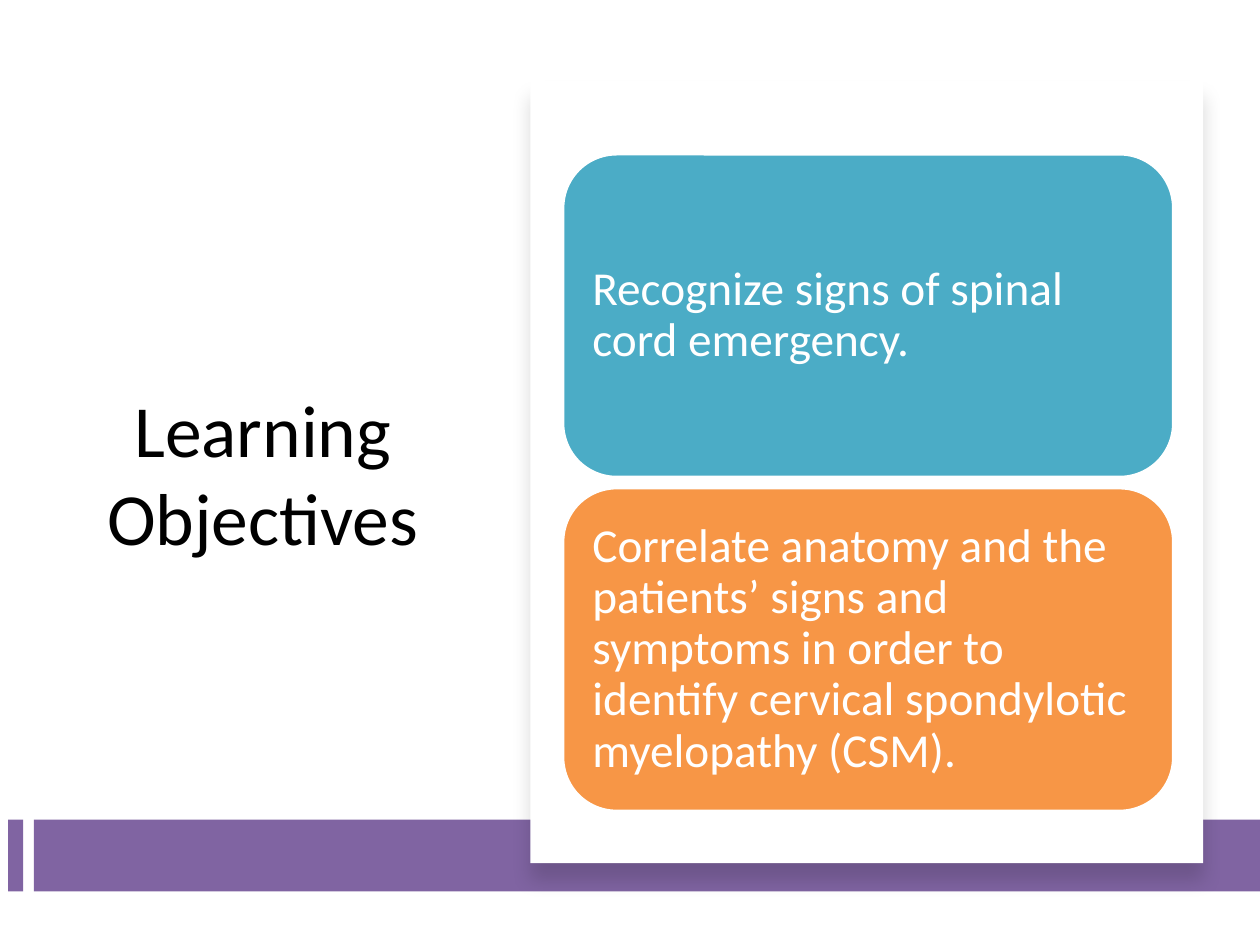
from dataclasses import dataclass

from lxml.etree import SubElement
from pptx import Presentation
from pptx.dml.color import RGBColor
from pptx.enum.shapes import MSO_SHAPE as Geo
from pptx.enum.text import MSO_ANCHOR as Anchor, PP_ALIGN as Align
from pptx.oxml.ns import qn
from pptx.util import Pt


@dataclass(frozen=True)
class Theme:
    font: str = "Calibri"
    black: str = "000000"
    white: str = "FFFFFF"
    purple: str = "8064A2"
    teal: str = "4BACC6"
    orange: str = "F79646"
    head: float = 42
    body: float = 27


@dataclass(frozen=True)
class Box:
    left: float
    top: float
    width: float
    height: float

    def pts(self) -> tuple:
        return Pt(self.left), Pt(self.top), Pt(self.width), Pt(self.height)


@dataclass(frozen=True)
class Card:
    text: str
    fill: str


THEME = Theme()
TITLE = Box(38.2, 86.4, 223.9, 367.2)
PANEL = Box(303.1, 46.1, 384.5, 447.1)
BARS = [Box(4.7, 468.4, 8.6, 41), Box(19.4, 468.4, 700.6, 41)]
FIRST = Box(321.5, 87.9, 349.2, 185)
STEP = 190.8
CARDS = [
    Card("Recognize signs of spinal cord emergency.", THEME.teal),
    Card("Correlate anatomy and the patients’ signs and symptoms in order to "
         "identify cervical spondylotic myelopathy (CSM).", THEME.orange),
]


def add_shape(slide, geo, box: Box, fill: str, line: str = ""):
    shape = slide.shapes.add_shape(geo, *box.pts())
    shape.shadow.inherit = False
    shape.fill.solid()
    shape.fill.fore_color.rgb = RGBColor.from_string(fill)
    if line:
        shape.line.color.rgb = RGBColor.from_string(line)
        shape.line.width = Pt(2)
    else:
        shape.line.fill.background()
    return shape


def put_text(shape, text: str, *, size: float, color: str, align=Align.LEFT,
             inset: float = 7.2, space: float = 1.0) -> None:
    frame = shape.text_frame
    frame.word_wrap = True
    frame.vertical_anchor = Anchor.MIDDLE
    frame.margin_left = frame.margin_right = Pt(inset)
    frame.margin_top = frame.margin_bottom = Pt(inset)
    para = frame.paragraphs[0]
    para.alignment = align
    para.line_spacing = space
    run = para.add_run()
    run.text = text
    run.font.name = THEME.font
    run.font.size = Pt(size)
    run.font.color.rgb = RGBColor.from_string(color)


def drop_shadow(shape, blur: float, dist: float, alpha: int) -> None:
    """Cast a soft black shadow straight down; alpha is in percent."""
    effects = shape._element.spPr.find(qn("a:effectLst"))
    outer = SubElement(effects, qn("a:outerShdw"), blurRad=str(Pt(blur)),
                       dist=str(Pt(dist)), dir="5400000", algn="t",
                       rotWithShape="0")
    color = SubElement(outer, qn("a:srgbClr"), val=THEME.black)
    SubElement(color, qn("a:alpha"), val=str(alpha * 1000))


def add_card(slide, card: Card, row: int) -> None:
    box = Box(FIRST.left, FIRST.top + row * STEP, FIRST.width, FIRST.height)
    shape = add_shape(slide, Geo.ROUNDED_RECTANGLE, box, card.fill, THEME.white)
    put_text(shape, card.text, size=THEME.body, color=THEME.white,
             inset=8, space=0.9)


def main() -> None:
    deck = Presentation()
    deck.slide_width, deck.slide_height = Pt(720), Pt(540)
    slide = deck.slides.add_slide(deck.slide_layouts[6])

    title = slide.shapes.add_textbox(*TITLE.pts())
    put_text(title, "Learning Objectives", size=THEME.head,
             color=THEME.black, align=Align.CENTER)
    for bar in BARS:
        add_shape(slide, Geo.RECTANGLE, bar, THEME.purple)
    panel = add_shape(slide, Geo.RECTANGLE, PANEL, THEME.white)
    drop_shadow(panel, blur=11, dist=10, alpha=15)
    for row, card in enumerate(CARDS):
        add_card(slide, card, row)

    deck.save("out.pptx")


if __name__ == "__main__":
    main()
